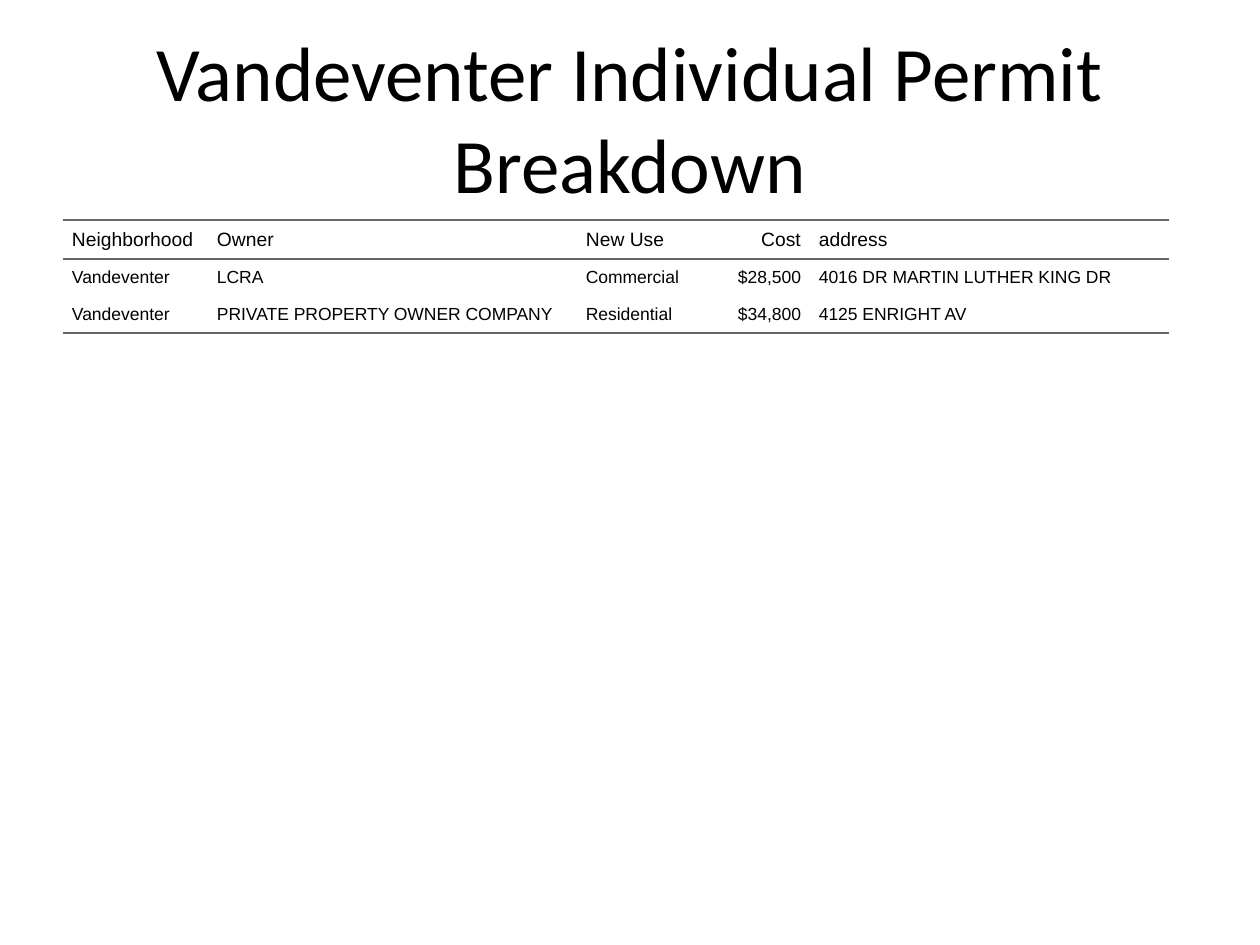
"""Build the Vandeventer individual permit breakdown slide."""
from lxml.etree import SubElement
from pptx import Presentation
from pptx.dml.color import RGBColor
from pptx.enum.text import MSO_ANCHOR as Anchor, PP_ALIGN as Align
from pptx.oxml.ns import qn
from pptx.util import Pt

PX = 914400 // 126
BLACK = RGBColor(0, 0, 0)
RULE_GRAY = RGBColor(0x66, 0x66, 0x66)

TITLE = "Vandeventer Individual Permit Breakdown"
TITLE_BOX = (63, 38, 1134, 157)
TABLE_LEFT, TABLE_TOP = 63, 220
COLUMN_WIDTHS = (145, 369, 139, 94, 359)
ROW_HEIGHTS = (39, 37, 37)
CELL_MARGIN = 9
COST_COLUMN = 3
PERMITS = [
    ("Neighborhood", "Owner", "New Use", "Cost", "address"),
    ("Vandeventer", "LCRA", "Commercial", "$28,500", "4016 DR MARTIN LUTHER KING DR"),
    ("Vandeventer", "PRIVATE PROPERTY OWNER COMPANY", "Residential", "$34,800", "4125 ENRIGHT AV"),
]


def set_text(frame, text, font_name, size, align):
    frame.text = text
    paragraph = frame.paragraphs[0]
    paragraph.alignment = align
    font = paragraph.font
    font.name, font.size = font_name, Pt(size)
    font.color.rgb = BLACK


def set_borders(cell, ruled_sides):
    properties = cell._tc.get_or_add_tcPr()
    for position, side in enumerate(("lnL", "lnR", "lnT", "lnB")):
        ruled = side in ruled_sides
        line = properties.makeelement(qn(f"a:{side}"), {"w": str(Pt(1.5) if ruled else 0)})
        properties.insert(position, line)
        fill = SubElement(line, qn("a:solidFill" if ruled else "a:noFill"))
        if ruled:
            SubElement(fill, qn("a:srgbClr"), val=str(RULE_GRAY))


def add_title(slide):
    shape = slide.shapes.add_textbox(*(value * PX for value in TITLE_BOX))
    frame = shape.text_frame
    frame.word_wrap = True
    frame.vertical_anchor = Anchor.MIDDLE
    set_text(frame, TITLE, "Calibri", 44, Align.CENTER)


def add_permit_table(slide):
    shape = slide.shapes.add_table(
        len(PERMITS), len(COLUMN_WIDTHS), TABLE_LEFT * PX, TABLE_TOP * PX,
        sum(COLUMN_WIDTHS) * PX, sum(ROW_HEIGHTS) * PX)
    table = shape.table
    table.first_row = table.horz_banding = False
    for column, width in zip(table.columns, COLUMN_WIDTHS):
        column.width = width * PX
    for row, height in zip(table.rows, ROW_HEIGHTS):
        row.height = height * PX
    ruled_sides = [("lnT", "lnB"), ("lnT",), ("lnB",)]
    for row_index, values in enumerate(PERMITS):
        for column_index, value in enumerate(values):
            cell = table.cell(row_index, column_index)
            cell.fill.background()
            cell.vertical_anchor = Anchor.MIDDLE
            cell.margin_left = cell.margin_right = CELL_MARGIN * PX
            cell.margin_top = cell.margin_bottom = 8 * PX
            align = Align.RIGHT if column_index == COST_COLUMN else Align.LEFT
            set_text(cell.text_frame, value, "Arial", 10 if row_index else 11, align)
            set_borders(cell, ruled_sides[row_index])


def main():
    presentation = Presentation()
    presentation.slide_width, presentation.slide_height = 1260 * PX, 945 * PX
    slide = presentation.slides.add_slide(presentation.slide_layouts[6])
    add_title(slide)
    add_permit_table(slide)
    presentation.save("out.pptx")


if __name__ == "__main__":
    main()
